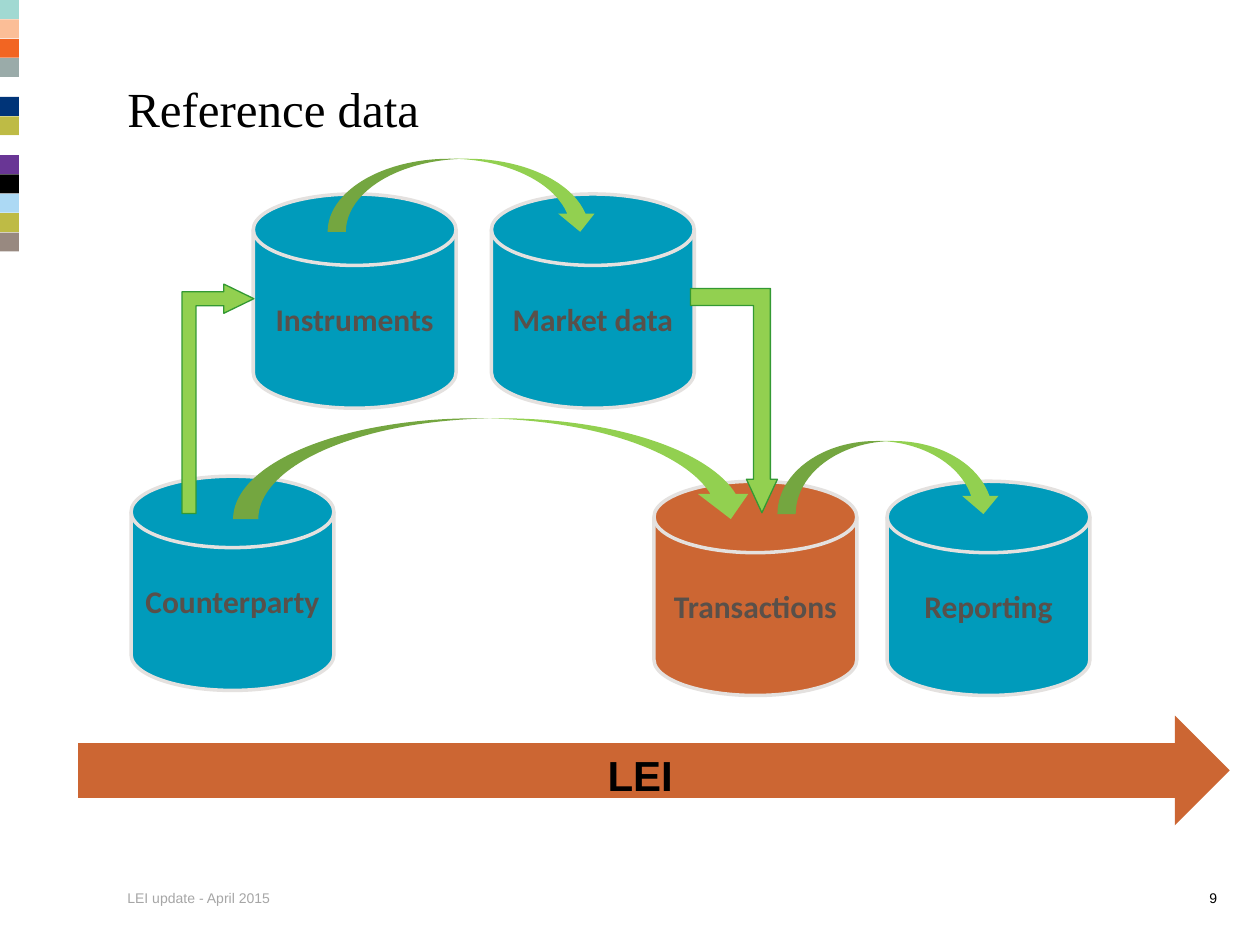
import pptx
import pptx.dml.color
import pptx.enum.shapes
import pptx.enum.text
import pptx.util

Inches = pptx.util.Inches
Pt = pptx.util.Pt
SHAPE = pptx.enum.shapes.MSO_SHAPE
ALIGN = pptx.enum.text.PP_ALIGN
ANCHOR = pptx.enum.text.MSO_ANCHOR
color = pptx.dml.color.RGBColor.from_string

TEAL, ORANGE, GREEN = "009BBB", "CC6633", "92D050"


def add_filled(kind, place, fill, line=None, width=0):
    """Add a shadowless preset shape at (left, top, width, height) in inches."""
    shape = page.shapes.add_shape(kind, *[Inches(value) for value in place])
    shape.shadow.inherit = False
    shape.fill.solid()
    shape.fill.fore_color.rgb = color(fill)
    if line:
        shape.line.color.rgb = color(line)
        shape.line.width = Pt(width)
    else:
        shape.line.fill.background()
    return shape


def write(box, text, ink, align, anchor, font, insets=(0.1, 0.05)):
    """Fill a box with one formatted paragraph."""
    frame = box.text_frame
    side, edge = [Inches(value) for value in insets]
    layout = {"word_wrap": True, "vertical_anchor": anchor,
              "auto_size": pptx.enum.text.MSO_AUTO_SIZE.NONE,
              "margin_left": side, "margin_right": side,
              "margin_top": edge, "margin_bottom": edge}
    for name, value in layout.items():
        setattr(frame, name, value)
    para = frame.paragraphs[0]
    para.alignment = align
    span = para.add_run()
    span.text = text
    for name, value in font.items():
        setattr(span.font, name, value)
    span.font.color.rgb = color(ink)


deck = pptx.Presentation()
deck.slide_width, deck.slide_height = Inches(10), Inches(7.5)
page = deck.slides.add_slide(deck.slide_layouts[5])

# Colour strip down the left edge
strip = ["A1D9D2", "FBBE97", "F26522", "9AABA9", "FFFFFF", "003478", "BEBB45",
         "FFFFFF", "693695", "000000", "ACD9F4", "BEBB45", "988980"]
step = 2 / len(strip)
for row, fill in enumerate(strip):
    add_filled(SHAPE.RECTANGLE, (0, row * step, 0.15, 0.15), fill)

# Title, footer and page number
title = page.shapes.title
title.left, title.top = Inches(0.92), Inches(0.58)
title.width, title.height = Inches(8.33), Inches(1.25)
write(title, "Reference data", "000000", ALIGN.LEFT, ANCHOR.TOP,
      {"name": "Times New Roman", "size": Pt(28)}, (0.09, 0.04))

footers = [("LEI update - April 2015", 0.92, 6.21, "A6A6A6", ALIGN.LEFT),
           ("9", 8.92, 0.83, "000000", ALIGN.RIGHT)]
for text, left, width, ink, align in footers:
    box = page.shapes.add_textbox(Inches(left), Inches(7), Inches(width), Inches(0.25))
    write(box, text, ink, align, ANCHOR.MIDDLE,
          {"name": "Arial", "size": Pt(8)}, (0.09, 0.04))

# Data stores
stores = [("Instruments", 2.01, 1.54, TEAL), ("Counterparty", 1.04, 3.78, TEAL),
          ("Market data", 3.9, 1.54, TEAL), ("Transactions", 5.19, 3.82, ORANGE),
          ("Reporting", 7.04, 3.82, TEAL)]
for text, left, top, fill in stores:
    disk = add_filled(SHAPE.FLOWCHART_MAGNETIC_DISK, (left, top, 1.61, 1.7),
                      fill, "E4E1DF", 2)
    write(disk, text, "59504A", ALIGN.CENTER, ANCHOR.MIDDLE,
          {"name": "Calibri", "size": Pt(18), "bold": True})

# LEI runs underneath every store
band = add_filled(SHAPE.RIGHT_ARROW, (0.62, 5.68, 9.14, 0.87), ORANGE)
write(band, "LEI", "000000", ALIGN.CENTER, ANCHOR.TOP,
      {"name": "Arial", "size": Pt(24), "bold": True})

# Flows between stores
for place in [(2.6, 1.26, 2.15, 0.58), (6.17, 3.5, 1.78, 0.58), (1.85, 3.32, 4.15, 0.8)]:
    add_filled(SHAPE.CURVED_DOWN_ARROW, place, GREEN)

bends = [((0.82, 2.88, 1.82, 0.57), 270, (0.194, 0.203, 0.419)),
         ((5.48, 2.29, 0.69, 1.78), 0, (0.194, 0.178, 0.386))]
for place, turn, adjustments in bends:
    bend = add_filled(SHAPE.BENT_UP_ARROW, place, GREEN, "339933", 0.75)
    bend.rotation = turn
    bend.element.spPr.xfrm.set("flipV", "1")
    for index, value in enumerate(adjustments):
        bend.adjustments[index] = value

deck.save("out.pptx")
